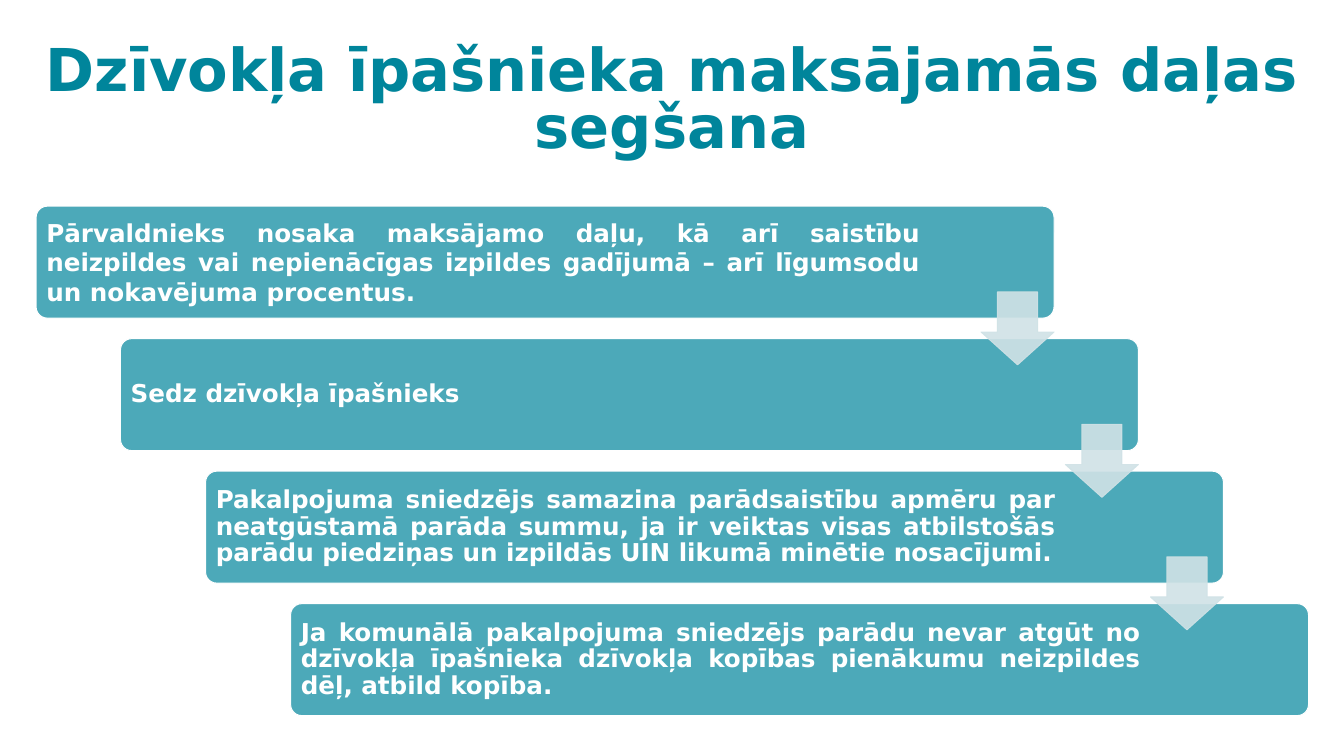
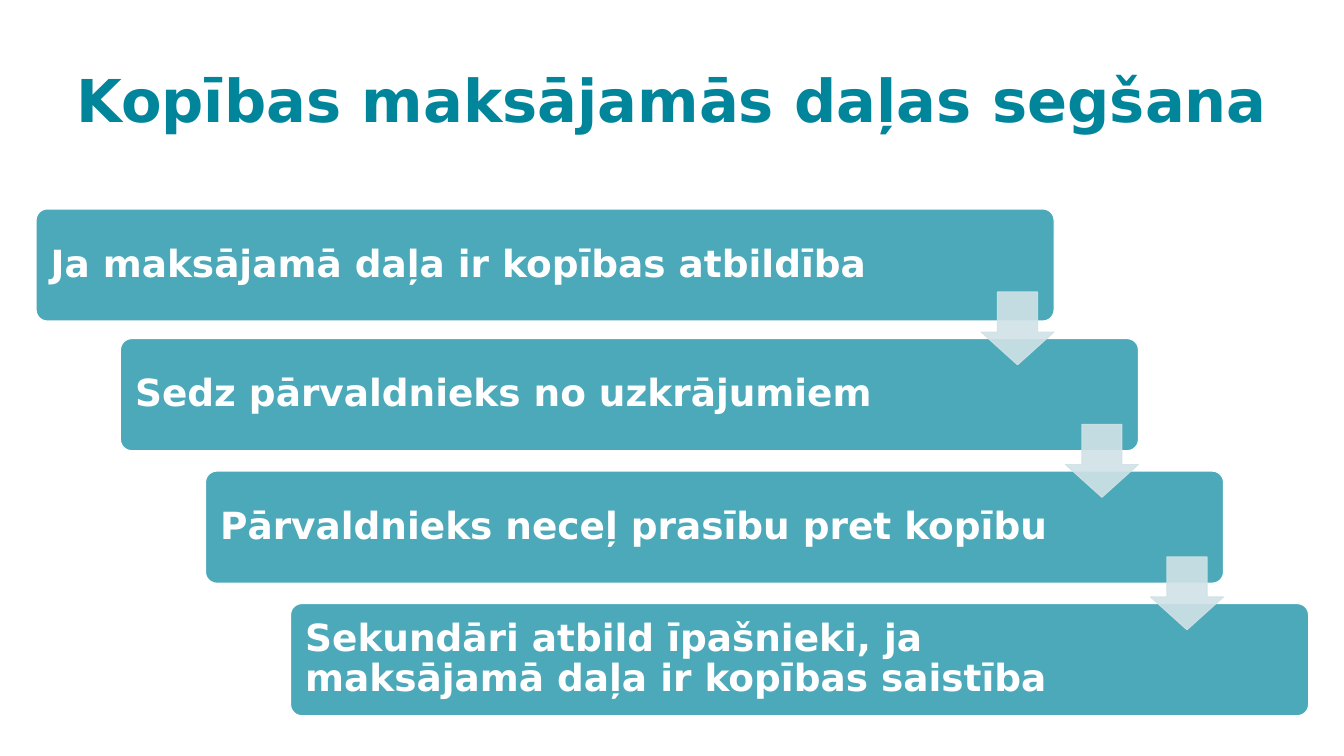
from dataclasses import dataclass

from lxml import etree
from pptx import Presentation
from pptx.dml.color import RGBColor
from pptx.enum.shapes import MSO_SHAPE
from pptx.enum.text import MSO_ANCHOR, MSO_AUTO_SIZE, PP_ALIGN
from pptx.oxml.ns import qn
from pptx.util import Pt

ROUNDED = MSO_SHAPE.ROUNDED_RECTANGLE
DOWN_ARROW = MSO_SHAPE.DOWN_ARROW
MIDDLE = MSO_ANCHOR.MIDDLE
NO_AUTOFIT = MSO_AUTO_SIZE.NONE
LEFT, CENTER, JUSTIFY = PP_ALIGN.LEFT, PP_ALIGN.CENTER, PP_ALIGN.JUSTIFY

EMU_PER_PX = 9144
SLIDE_WIDTH, SLIDE_HEIGHT = 1896, 1067
TITLE_ONLY_LAYOUT = 5
MARGIN = 51
BAR_WIDTH, BAR_HEIGHT = 1436, 158
BAR_TOP, BAR_PITCH = 291, 187
STAIR_WIDTH = 359
ARROW_SIZE = 103
ARROW_DROP = 121


@dataclass(frozen=True)
class Theme:
    font: str = "DejaVu Sans"
    title: RGBColor = RGBColor(0x00, 0x85, 0x9B)
    bar: RGBColor = RGBColor(0x4C, 0xA9, 0xB9)
    arrow: RGBColor = RGBColor(0xD0, 0xE2, 0xE6)
    white: RGBColor = RGBColor(0xFF, 0xFF, 0xFF)
    title_size: int = 60
    text_size: int = 25
    large_size: int = 38
    arrow_opacity: int = 90


def px(length):
    return length * EMU_PER_PX


class Deck:
    def __init__(self, theme):
        self.theme = theme
        self.presentation = Presentation()
        self.presentation.slide_width = px(SLIDE_WIDTH)
        self.presentation.slide_height = px(SLIDE_HEIGHT)
        self.slide = None

    def set_text(self, shape, text, size, color, alignment, spacing, insets):
        frame = shape.text_frame
        frame.word_wrap = True
        frame.auto_size = NO_AUTOFIT
        frame.vertical_anchor = MIDDLE
        frame.margin_left, frame.margin_top, frame.margin_right, frame.margin_bottom = map(px, insets)
        frame.text = text
        paragraph = frame.paragraphs[0]
        paragraph.alignment = alignment
        paragraph.line_spacing = spacing
        paragraph.font.name = self.theme.font
        paragraph.font.size = Pt(size)
        paragraph.font.bold = True
        paragraph.font.color.rgb = color

    def add_slide(self, title, spacing):
        layout = self.presentation.slide_layouts[TITLE_ONLY_LAYOUT]
        self.slide = self.presentation.slides.add_slide(layout)
        shape = self.slide.shapes.title
        shape.left, shape.top = px(MARGIN), px(53)
        shape.width, shape.height = px(SLIDE_WIDTH - 2 * MARGIN), px(185)
        self.set_text(shape, title, self.theme.title_size, self.theme.title,
                      CENTER, spacing, (10, 5, 10, 5))

    def shape(self, kind, left, top, width, height, fill, line, adjustments):
        shape = self.slide.shapes.add_shape(kind, px(left), px(top), px(width), px(height))
        shape.shadow.inherit = False
        shape.fill.solid()
        shape.fill.fore_color.rgb = fill
        shape.line.color.rgb = line
        shape.line.width = Pt(1)
        for index, value in enumerate(adjustments):
            shape.adjustments[index] = value
        return shape

    def bar(self, left, top, text, size, inset, right_inset, alignment, spacing):
        shape = self.shape(ROUNDED, left, top, BAR_WIDTH, BAR_HEIGHT,
                           self.theme.bar, self.theme.white, [0.1])
        self.set_text(shape, text, size, self.theme.white, alignment, spacing,
                      (inset, inset, right_inset, inset))

    def arrow(self, left, top):
        color = self.theme.arrow
        shape = self.shape(DOWN_ARROW, left, top, ARROW_SIZE, ARROW_SIZE,
                           color, color, [0.55, 0.45])
        for element in shape.element.spPr.iter(qn("a:srgbClr")):
            alpha = etree.SubElement(element, qn("a:alpha"))
            alpha.set("val", str(self.theme.arrow_opacity * 1000))

    def staircase(self, steps, size, inset, first_top=BAR_TOP, first_spacing=0.9):
        last = len(steps) - 1
        corners = [(MARGIN + index * STAIR_WIDTH // last, BAR_TOP + index * BAR_PITCH)
                   for index in range(len(steps))]
        for index, ((left, top), (text, alignment)) in enumerate(zip(corners, steps)):
            first = index == 0
            self.bar(left, first_top if first else top, text, size, inset,
                     inset + (175 if first else 223), alignment,
                     first_spacing if first else 0.9)
        for left, top in corners[:-1]:
            self.arrow(left + BAR_WIDTH - ARROW_SIZE, top + ARROW_DROP)


def main():
    theme = Theme()
    deck = Deck(theme)

    deck.add_slide("Dzīvokļa īpašnieka maksājamās daļas segšana", 0.8)
    deck.staircase([
        ("Pārvaldnieks nosaka maksājamo daļu, kā arī saistību neizpildes vai "
         "nepienācīgas izpildes gadījumā – arī līgumsodu un nokavējuma procentus.", JUSTIFY),
        ("Sedz dzīvokļa īpašnieks", LEFT),
        ("Pakalpojuma sniedzējs samazina parādsaistību apmēru par neatgūstamā "
         "parāda summu, ja ir veiktas visas atbilstošās parādu piedziņas un "
         "izpildās UIN likumā minētie nosacījumi.", JUSTIFY),
        ("Ja komunālā pakalpojuma sniedzējs parādu nevar atgūt no dzīvokļa "
         "īpašnieka dzīvokļa kopības pienākumu neizpildes dēļ, atbild kopība.", JUSTIFY),
    ], theme.text_size, inset=10, first_spacing=1.0)

    deck.add_slide("Kopības maksājamās daļas segšana", 0.9)
    deck.staircase([
        ("Ja maksājamā daļa ir kopības atbildība", LEFT),
        ("Sedz pārvaldnieks no uzkrājumiem", LEFT),
        ("Pārvaldnieks neceļ prasību pret kopību", LEFT),
        ("Sekundāri atbild īpašnieki, ja maksājamā daļa ir kopības saistība", LEFT),
    ], theme.large_size, inset=16, first_top=295)

    deck.presentation.save("out.pptx")


if __name__ == "__main__":
    main()
